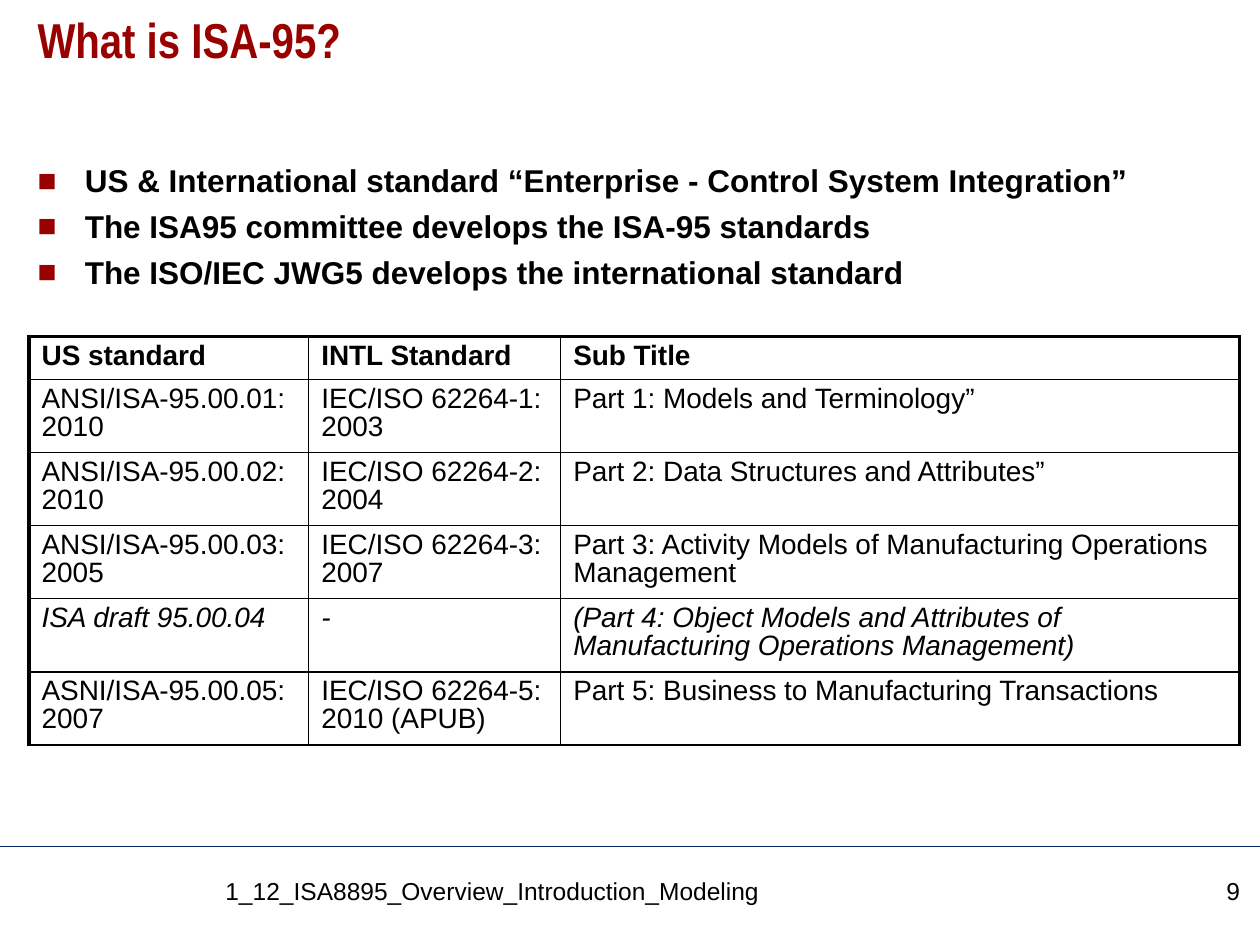
from pptx import Presentation
from pptx.dml.color import RGBColor
from pptx.enum.shapes import MSO_CONNECTOR as Connector
from pptx.enum.text import PP_ALIGN as Align
from pptx.oxml import parse_xml
from pptx.oxml.ns import nsdecls
from pptx.util import Pt

BLACK = RGBColor(0, 0, 0)
BODY = RGBColor(1, 0, 0)
RED = RGBColor(0x99, 0, 0)
NAVY = RGBColor(0, 0x20, 0x60)
THICK, THIN = 2.25, 1

BULLETS = [
    "US & International standard “Enterprise - Control System Integration”",
    "The ISA95 committee develops the ISA-95 standards",
    "The ISO/IEC JWG5 develops the international standard",
]
STANDARDS = [
    ("US standard", "INTL Standard", "Sub Title"),
    ("ANSI/ISA-95.00.01: 2010", "IEC/ISO 62264-1: 2003", "Part 1: Models and Terminology”"),
    ("ANSI/ISA-95.00.02: 2010", "IEC/ISO 62264-2: 2004", "Part 2: Data Structures and Attributes”"),
    ("ANSI/ISA-95.00.03: 2005", "IEC/ISO 62264-3: 2007",
     "Part 3: Activity Models of Manufacturing Operations Management"),
    ("ISA draft 95.00.04", "-",
     "(Part 4: Object Models and Attributes of Manufacturing Operations Management)"),
    ("ASNI/ISA-95.00.05: 2007", "IEC/ISO 62264-5: 2010 (APUB)",
     "Part 5: Business to Manufacturing Transactions"),
]
HEADER_ROW, DRAFT_ROW = 0, 4


def write(para, text, size=16, face="Arial", color=BLACK, bold=False, italic=False,
          align=Align.LEFT, spacing=None, before=0):
    """Put one formatted run of text into a paragraph."""
    para.alignment = align
    para.space_before = Pt(before)
    if spacing:
        para.line_spacing = spacing
    span = para.add_run()
    span.text = text
    span.font.size, span.font.name = Pt(size), face
    span.font.bold, span.font.italic = bold, italic
    span.font.color.rgb = color


class SlideBuilder:
    """Draw styled elements on the current page."""

    def __init__(self, page):
        self.page = page

    def frame(self, left, top, width, height):
        """Add an empty wrapping text box and return its text frame."""
        box = self.page.shapes.add_textbox(Pt(left), Pt(top), Pt(width), Pt(height))
        box.text_frame.word_wrap = True
        return box.text_frame

    def text(self, text, left, top, width, height, **style):
        """Add a text box with one paragraph."""
        write(self.frame(left, top, width, height).paragraphs[0], text, **style)

    def bullets(self, items, left, top, width, height, indent=27, gap=4.5, **style):
        """Add a list with red square bullets."""
        frame = self.frame(left, top, width, height)
        for index, item in enumerate(items):
            para = frame.add_paragraph() if index else frame.paragraphs[0]
            props = para._p.get_or_add_pPr()
            props.set("marL", str(Pt(indent)))
            props.set("indent", str(-Pt(indent)))
            props.append(parse_xml(
                f'<a:buClr {nsdecls("a")}><a:srgbClr val="{RED}"/></a:buClr>'))
            props.append(parse_xml(f'<a:buFont {nsdecls("a")} typeface="Arial"/>'))
            props.append(parse_xml(f'<a:buChar {nsdecls("a")} char="■"/>'))
            write(para, item, before=gap if index else 0, **style)

    def rule(self, left, top, right, color, weight):
        """Add a horizontal line."""
        line = self.page.shapes.add_connector(
            Connector.STRAIGHT, Pt(left), Pt(top), Pt(right), Pt(top))
        line.line.color.rgb, line.line.width = color, Pt(weight)
        line._element.spPr.append(parse_xml(f'<a:effectLst {nsdecls("a")}/>'))

    def borders(self, cell, **weights):
        """Set black cell borders, given in the order L, R, T, B."""
        props = cell._tc.get_or_add_tcPr()
        for side, weight in weights.items():
            props.append(parse_xml(
                f'<a:ln{side} {nsdecls("a")} w="{Pt(weight)}"><a:solidFill>'
                f'<a:srgbClr val="{BLACK}"/></a:solidFill></a:ln{side}>'))

    def table(self, rows, left, top, widths, heights):
        """Add an unfilled table with heavy left, top and right edges."""
        grid = self.page.shapes.add_table(
            len(rows), len(widths), Pt(left), Pt(top), Pt(sum(widths)), Pt(sum(heights))).table
        grid.first_row = grid.horz_banding = False
        for column, width in zip(grid.columns, widths):
            column.width = Pt(width)
        last = len(widths) - 1
        for r, (row, height) in enumerate(zip(rows, heights)):
            grid.rows[r].height = Pt(height)
            for c, text in enumerate(row):
                cell = grid.cell(r, c)
                write(cell.text_frame.paragraphs[0], text, spacing=0.9,
                      bold=r == HEADER_ROW, italic=r == DRAFT_ROW)
                self.borders(cell, L=THIN if c else THICK, R=THICK if c == last else THIN,
                             T=THIN if r else THICK, B=THIN)
                cell.fill.background()


def main():
    """Build the ISA-95 slide."""
    deck = Presentation()
    deck.slide_width, deck.slide_height = Pt(720), Pt(540)
    builder = SlideBuilder(deck.slides.add_slide(deck.slide_layouts[6]))
    builder.rule(0, 483.8, 720, NAVY, 0.75)
    builder.text("What is ISA-95?", 14.4, 5.8, 692, 60, size=28, face="Arial Narrow",
                 color=RED, bold=True, spacing=0.9)
    builder.bullets(BULLETS, 14.4, 88.6, 692, 186.5, size=18, color=BODY, bold=True)
    builder.table(STANDARDS, 16.6, 192.4, [159.8, 144, 388], [23] + [39.1] * 5)
    builder.text("1_12_ISA8895_Overview_Introduction_Modeling", 121.7, 496.8, 519, 32.4, size=14)
    builder.text("9", 649.4, 496.8, 66.2, 32.4, size=14, align=Align.RIGHT)
    deck.save("out.pptx")


if __name__ == "__main__":
    main()
